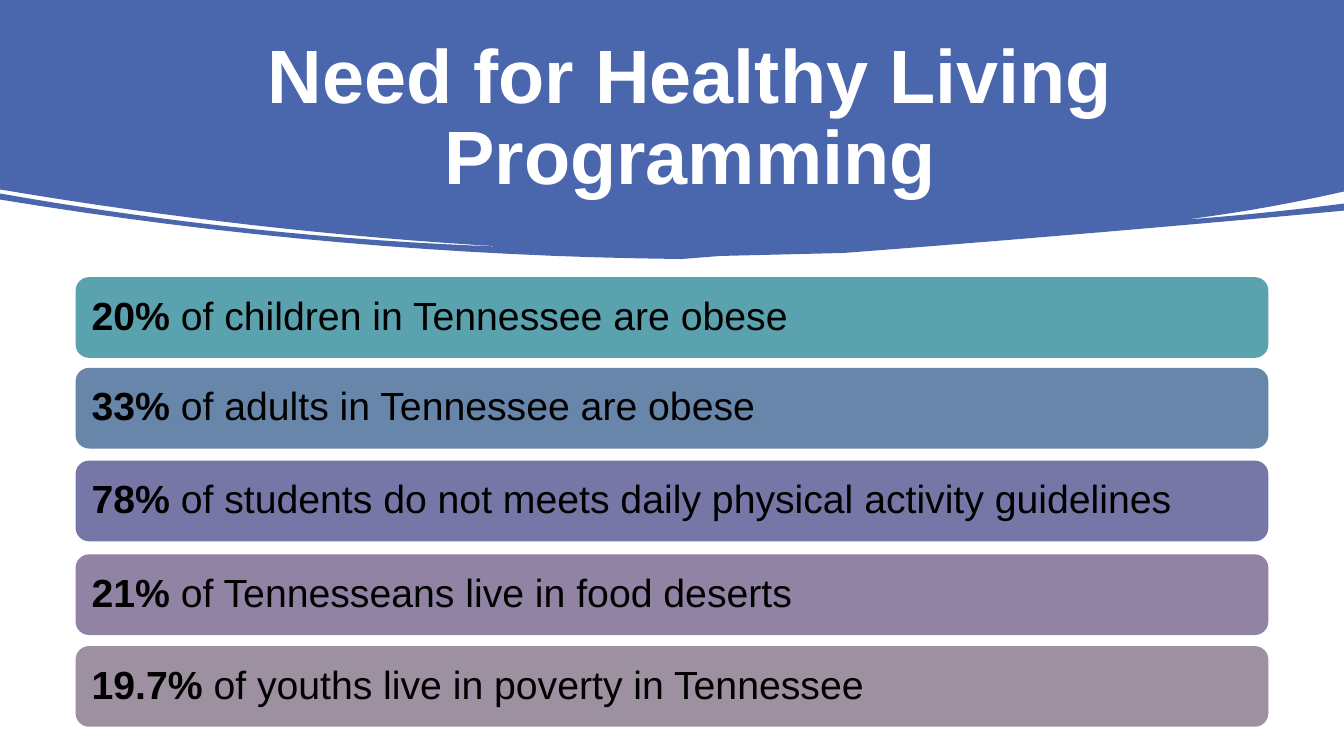
from pptx import Presentation
from pptx.dml.color import RGBColor
from pptx.enum.shapes import MSO_SHAPE
from pptx.enum.text import MSO_ANCHOR, PP_ALIGN
from pptx.util import Inches, Pt

FONT = "Arial"
WIDTH, HEIGHT = 13.33, 7.5
STEPS = 16
COLORS = {
    "banner": "4A66AC",
    "title": "FFFFFF",
    "text": "000000",
    "teal": "5AA2AE",
    "blue": "6885AA",
    "violet": "7677A6",
    "purple": "9083A3",
    "mauve": "9D90A0",
}
FACTS = [
    (2.75, "teal", "20%", "of children in Tennessee are obese"),
    (3.65, "blue", "33%", "of adults in Tennessee are obese"),
    (4.57, "violet", "78%", "of students do not meets daily physical activity guidelines"),
    (5.5, "purple", "21%", "of Tennesseans live in food deserts"),
    (6.41, "mauve", "19.7%", "of youths live in poverty in Tennessee"),
]

LEFT_TIP = (5.04, 2.45)
RIGHT_TIP = (11.75, 2.18)
BEND = (8.37, 2.51)
LEDGE = (7.14, 2.54)
LOW = (6.76, 2.57)
ARCS = [
    ((WIDTH, 1.9), RIGHT_TIP, 0.02),
    (RIGHT_TIP, (WIDTH, 2.02), 0.01),
    ((WIDTH, 2.09), BEND, 0.01),
    (BEND, LEDGE, 0),
    (LEDGE, LOW, 0),
    (LOW, (0, 1.98), 0.13),
    ((0, 1.92), LEFT_TIP, 0.09),
    (LEFT_TIP, (0, 1.88), 0.07),
]


def color(name):
    return RGBColor.from_string(COLORS[name])


def paint(shape, name):
    shape.shadow.inherit = False
    shape.fill.solid()
    shape.fill.fore_color.rgb = color(name)
    shape.line.fill.background()


def style(para, size, name, align):
    para.alignment = align
    para.line_spacing = 0.9
    para.font.name = FONT
    para.font.size = Pt(size)
    para.font.color.rgb = color(name)


def center(frame):
    frame.word_wrap = True
    frame.vertical_anchor = MSO_ANCHOR.MIDDLE
    return frame.paragraphs[0]


def trace(start, end, sag):
    (left, top), (right, base) = start, end
    count = STEPS if sag else 1
    for step in range(count + 1):
        part = step / count
        drop = 4 * sag * part * (1 - part)
        yield left + (right - left) * part, top + (base - top) * part + drop


def add_banner(slide):
    points = [(WIDTH, 0)]
    for arc in ARCS:
        points.extend(trace(*arc))
    outline = slide.shapes.build_freeform(0, 0)
    outline.add_line_segments([(Inches(x), Inches(y)) for x, y in points], close=True)
    paint(outline.convert_to_shape(), "banner")


def add_title(slide, text):
    box = slide.shapes.add_textbox(Inches(0.78), Inches(0.25), Inches(12.13), Inches(1.87))
    para = center(box.text_frame)
    para.text = text
    style(para, 54, "title", PP_ALIGN.CENTER)
    para.font.bold = True


def add_fact(slide, top, fill, share, claim):
    bar = slide.shapes.add_shape(
        MSO_SHAPE.ROUNDED_RECTANGLE, Inches(0.75), Inches(top), Inches(11.83), Inches(0.8)
    )
    paint(bar, fill)
    frame = bar.text_frame
    frame.margin_left = frame.margin_right = Inches(0.12)
    para = center(frame)
    style(para, 28, "text", PP_ALIGN.LEFT)
    for text, bold in ((share + " ", True), (claim, False)):
        run = para.add_run()
        run.text = text
        run.font.bold = bold


def main():
    deck = Presentation()
    deck.slide_width = Inches(WIDTH)
    deck.slide_height = Inches(HEIGHT)
    slide = deck.slides.add_slide(deck.slide_layouts[6])
    add_banner(slide)
    add_title(slide, "Need for Healthy Living Programming")
    for fact in FACTS:
        add_fact(slide, *fact)
    deck.save("out.pptx")


if __name__ == "__main__":
    main()
